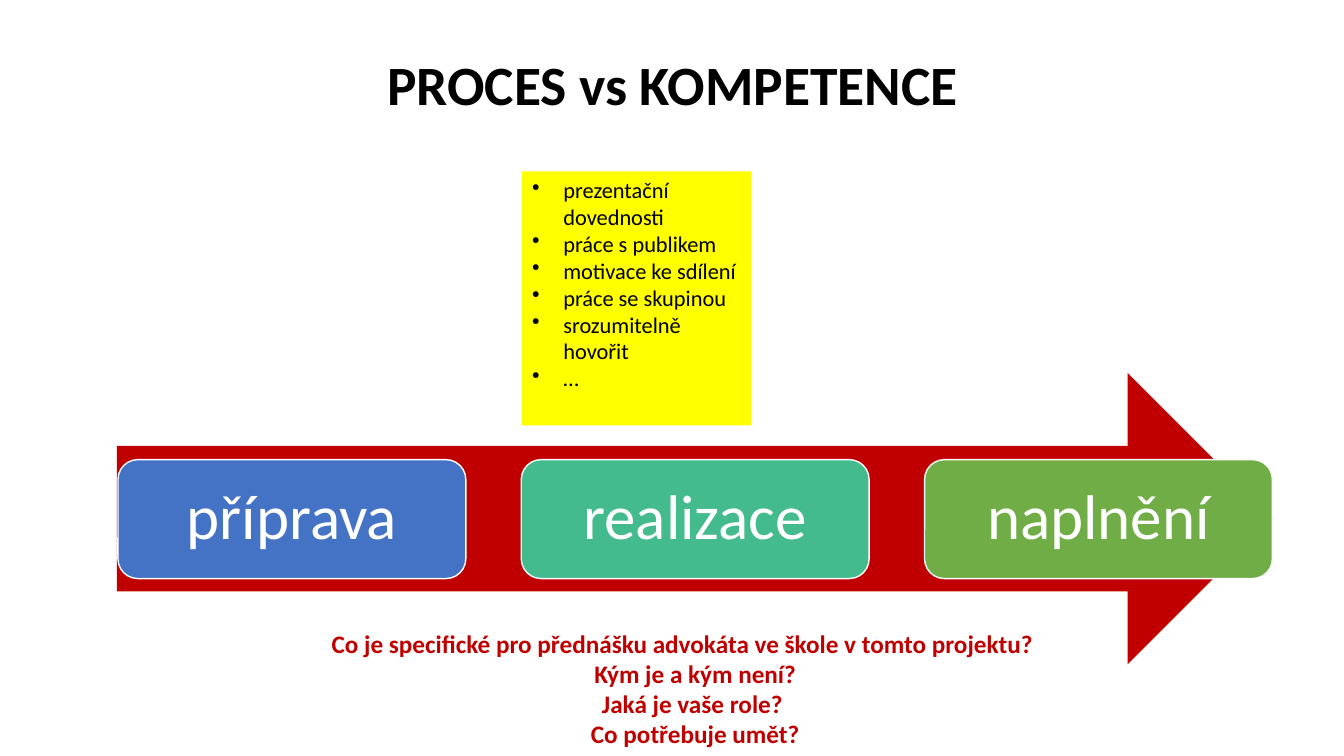
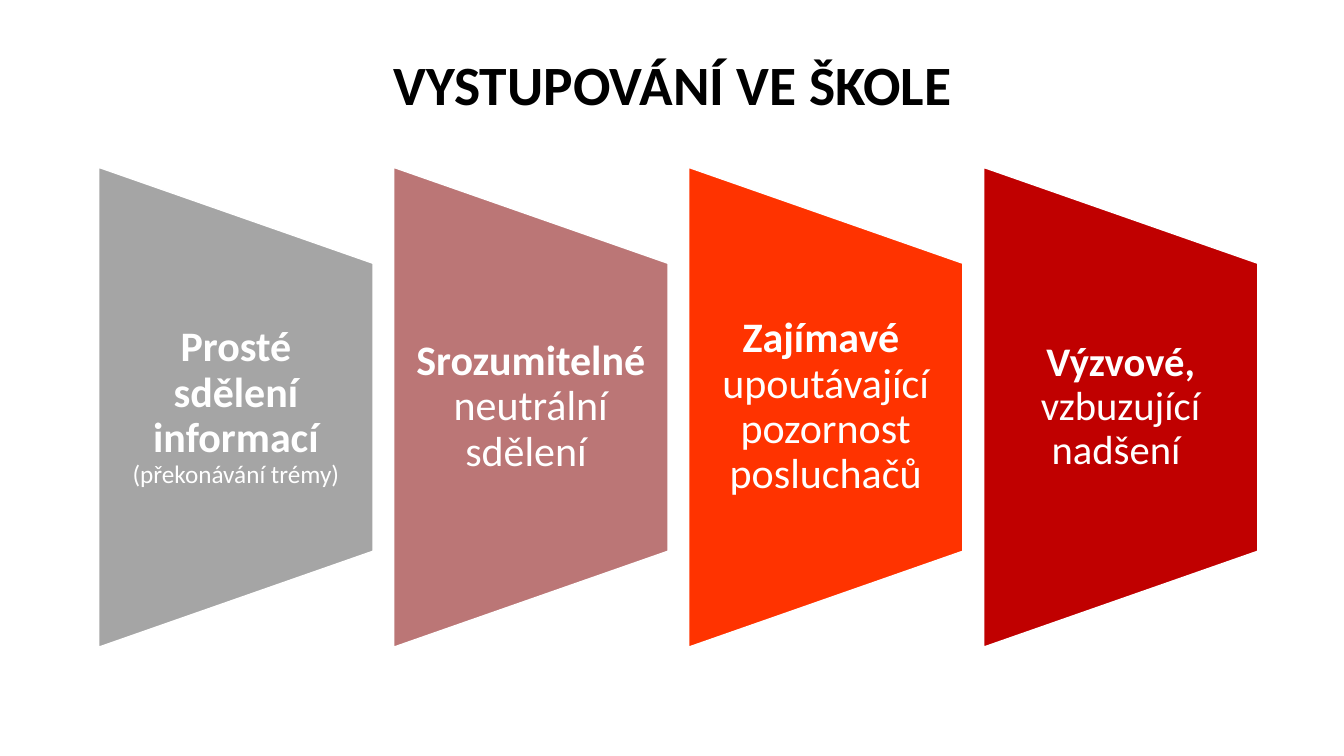
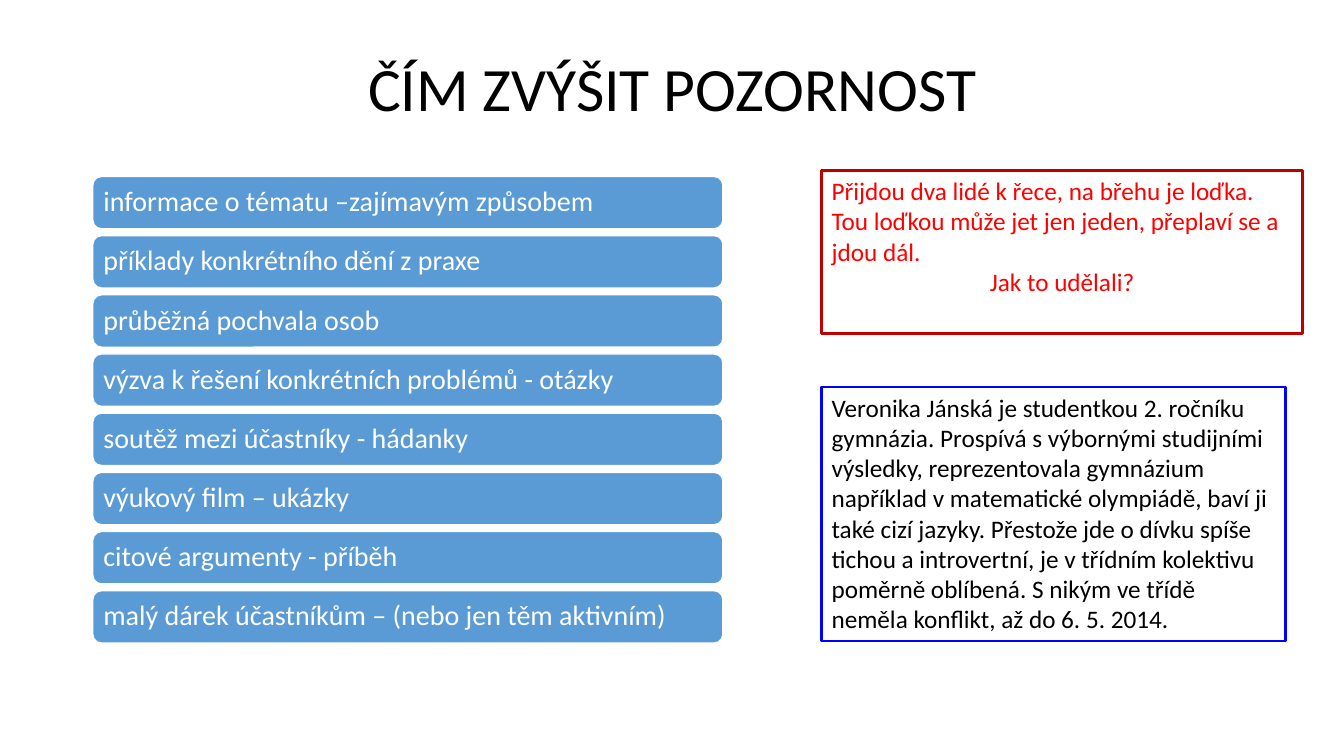
import dataclasses

import lxml.etree
import pptx
import pptx.dml.color
import pptx.enum.shapes
import pptx.enum.text
import pptx.oxml.ns
import pptx.util

Inches = pptx.util.Inches
Pt = pptx.util.Pt
Shape = pptx.enum.shapes.MSO_SHAPE
Align = pptx.enum.text.PP_ALIGN
Anchor = pptx.enum.text.MSO_ANCHOR


@dataclasses.dataclass(frozen=True)
class Theme:
    font: str = "Calibri"
    black: str = "000000"
    white: str = "FFFFFF"
    dark: str = "C00000"
    red: str = "FF0000"
    navy: str = "0000FF"
    yellow: str = "FFFF00"
    blue: str = "4472C4"
    teal: str = "43BB8D"
    green: str = "70AD47"
    sky: str = "5B9BD5"
    gray: str = "A5A5A5"
    rose: str = "BB7676"
    orange: str = "FF3300"
    title: float = 39.6
    large: float = 44
    step: float = 45
    panel: float = 30
    bar: float = 20
    body: float = 18
    note: float = 16


theme = Theme()


def rgb(code):
    return pptx.dml.color.RGBColor.from_string(code)


def draw(slide, kind, at, fill=None, line=None, width=1):
    """Add a preset shape, or a text box when kind is None."""
    place = [Inches(n) for n in at]
    if kind is None:
        return slide.shapes.add_textbox(*place)
    shape = slide.shapes.add_shape(kind, *place)
    shape.shadow.inherit = False
    if fill:
        shape.fill.solid()
        shape.fill.fore_color.rgb = rgb(fill)
    else:
        shape.fill.background()
    if line:
        shape.line.color.rgb = rgb(line)
        shape.line.width = Pt(width)
    else:
        shape.line.fill.background()
    return shape


def write(shape, *paras, size=theme.body, color=theme.black, bold=False,
          align=Align.LEFT, anchor=Anchor.TOP, pads=(0.1, 0.05),
          leading=1.0, bullet=None):
    """Fill a shape; a paragraph is a string or a list of (text, size, bold)."""
    frame = shape.text_frame
    frame.word_wrap = True
    frame.auto_size = pptx.enum.text.MSO_AUTO_SIZE.NONE
    frame.vertical_anchor = anchor
    frame.margin_left = frame.margin_right = Inches(pads[0])
    frame.margin_top = frame.margin_bottom = Inches(pads[1])
    for i, para in enumerate(paras):
        p = frame.add_paragraph() if i else frame.paragraphs[0]
        p.alignment = align
        p.line_spacing = leading
        for text, pts, heavy in [(para, size, bold)] if isinstance(para, str) else para:
            run = p.add_run()
            run.text = text
            run.font.name = theme.font
            run.font.size = Pt(pts)
            run.font.bold = heavy
            run.font.color.rgb = rgb(color)
        if bullet:
            props = p._p.get_or_add_pPr()
            props.set("marL", str(Inches(0.31)))
            props.set("indent", str(-Inches(0.31)))
            mark = lxml.etree.SubElement(props, pptx.oxml.ns.qn("a:buChar"))
            mark.set("char", bullet)
    return frame.paragraphs


deck = pptx.Presentation()
deck.slide_width = Inches(13.33)
deck.slide_height = Inches(7.5)

slides = []
for text, size, bold, height, anchor, leading in [
    ("PROCES vs KOMPETENCE", theme.title, True, 1.45, Anchor.TOP, 1.07),
    ("VYSTUPOVÁNÍ VE ŠKOLE", theme.title, True, 1.45, Anchor.TOP, 1.07),
    ("ČÍM ZVÝŠIT POZORNOST", theme.large, False, 1.02, Anchor.MIDDLE, 0.9),
]:
    slide = deck.slides.add_slide(deck.slide_layouts[5])
    title = slide.shapes.title
    title.left, title.top = Inches(0.92), Inches(0.4)
    title.width, title.height = Inches(11.5), Inches(height)
    write(title, text, size=size, bold=bold, align=Align.CENTER,
          anchor=anchor, leading=leading)
    slides.append(slide)
process, talk, focus = slides

# Process and competence
draw(process, Shape.RIGHT_ARROW, (1.16, 3.7, 11.47, 2.89), theme.dark)
steps = [("příprava", theme.blue), ("realizace", theme.teal), ("naplnění", theme.green)]
for i, (text, fill) in enumerate(steps):
    step = draw(process, Shape.ROUNDED_RECTANGLE, (1.17 + 4 * i, 4.56, 3.45, 1.18),
                fill, theme.white)
    write(step, text, size=theme.step, color=theme.white, align=Align.CENTER,
          anchor=Anchor.MIDDLE, pads=(0.19, 0.19), leading=0.9)

skills = draw(process, Shape.RECTANGLE, (5.18, 1.7, 2.27, 2.52), theme.yellow)
write(skills, "prezentační dovednosti", "práce s publikem", "motivace ke sdílení",
      "práce se skupinou", "srozumitelně hovořit", "…", size=theme.note, bullet="•")

asks = draw(process, None, (3.19, 6.18, 7.41, 1.31))
lines = write(asks, "Co je specifické pro přednášku advokáta ve škole v tomto projektu?",
              "Kým je a kým není?", "Jaká je vaše role? ", "Co potřebuje umět?",
              color=theme.dark, bold=True, align=Align.CENTER)
lines[0].alignment = Align.LEFT

# Speaking at school
panels = [
    ("Prosté sdělení informací ", "(překonávání trémy)", theme.panel, theme.body, theme.gray),
    ("Srozumitelné ", "neutrální sdělení ", theme.panel, theme.panel, theme.rose),
    ("Zajímavé  ", "upoutávající pozornost posluchačů", theme.panel, theme.panel, theme.orange),
    ("Výzvové, ", "vzbuzující nadšení ", theme.panel - 1, theme.panel - 1, theme.dark),
]
for i, (head, tail, big, small, fill) in enumerate(panels):
    left = 0.98 + 2.925 * i
    panel = draw(talk, Shape.FLOWCHART_MANUAL_OPERATION, (left - 1.02, 2.68, 4.76, 2.72),
                 fill, theme.white)
    panel.rotation = 270
    label = draw(talk, None, (left, 2.61, 2.72, 2.86))
    write(label, [(head, big, True), (tail, small, False)], color=theme.white,
          align=Align.CENTER, anchor=Anchor.MIDDLE, pads=(0.2, 0), leading=0.9)

# Raising attention
tips = [
    "informace o tématu –zajímavým způsobem",
    "příklady konkrétního dění z praxe",
    "průběžná pochvala osob",
    "výzva k řešení konkrétních problémů - otázky",
    "soutěž mezi účastníky - hádanky",
    "výukový film – ukázky",
    "citové argumenty - příběh",
    "malý dárek účastníkům – (nebo jen těm aktivním)",
]
pitch = (5.86 - 1.75) / (len(tips) - 1)
for i, tip in enumerate(tips):
    bar = draw(focus, Shape.ROUNDED_RECTANGLE, (0.92, 1.75 + pitch * i, 6.25, 0.52),
               theme.sky, theme.white)
    write(bar, tip, size=theme.bar, color=theme.white, anchor=Anchor.MIDDLE,
          pads=(0.08, 0.08), leading=0.9)

riddle = draw(focus, Shape.RECTANGLE, (8.15, 1.69, 4.77, 1.62), line=theme.dark, width=1.75)
lines = write(riddle, "Přijdou dva lidé k řece, na břehu je loďka. Tou loďkou může jet "
              "jen jeden, přeplaví se a jdou dál.", "Jak to udělali?", color=theme.red)
lines[1].alignment = Align.CENTER

story = draw(focus, Shape.RECTANGLE, (8.15, 3.84, 4.6, 2.52), line=theme.navy, width=1.75)
write(story, "Veronika Jánská je studentkou 2. ročníku gymnázia. Prospívá s výbornými "
      "studijními výsledky, reprezentovala gymnázium například v matematické olympiádě, "
      "baví ji také cizí jazyky. Přestože jde o dívku spíše tichou a introvertní, je "
      "v třídním kolektivu poměrně oblíbená. S nikým ve třídě neměla konflikt, "
      "až do 6. 5. 2014.")

deck.save("out.pptx")
